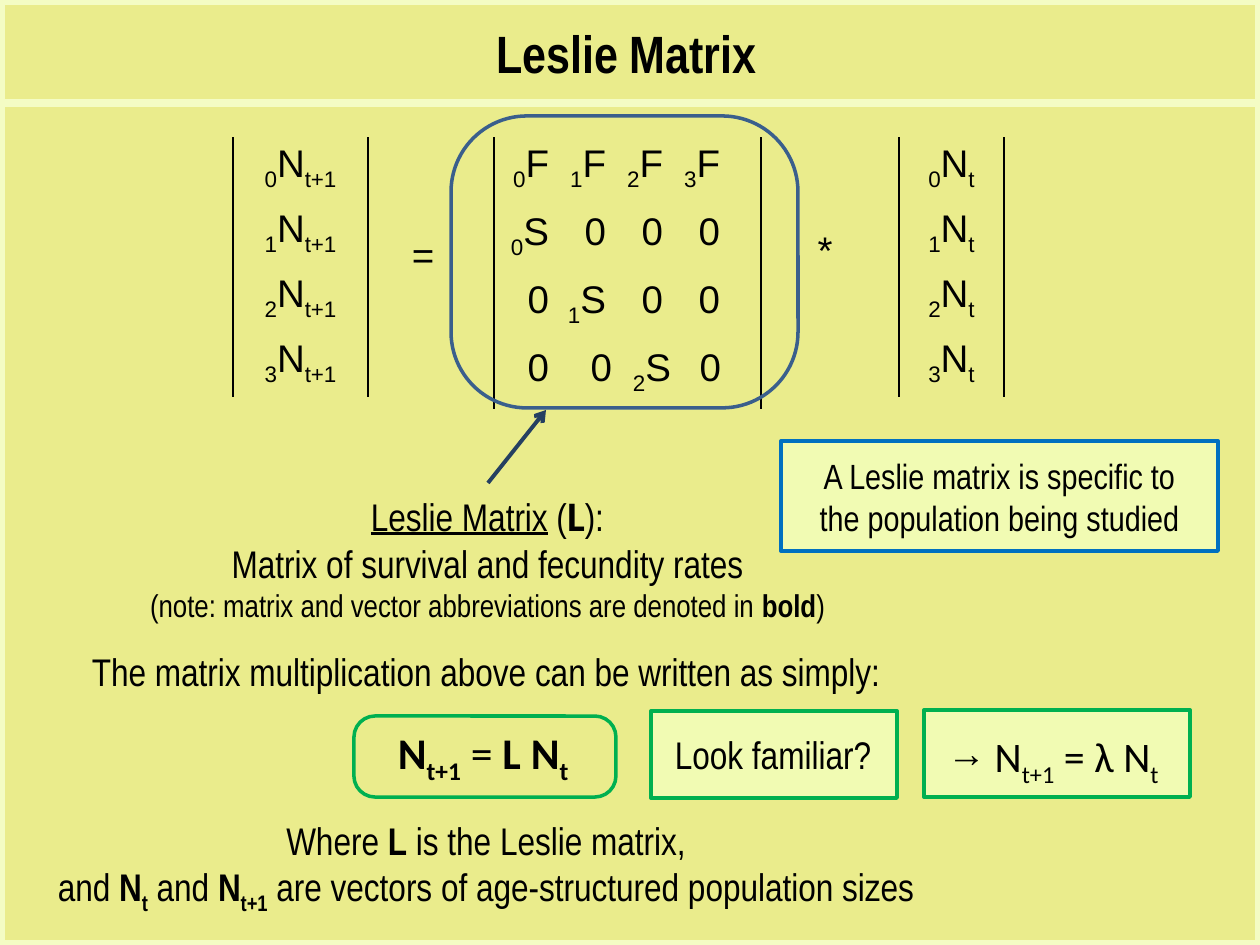
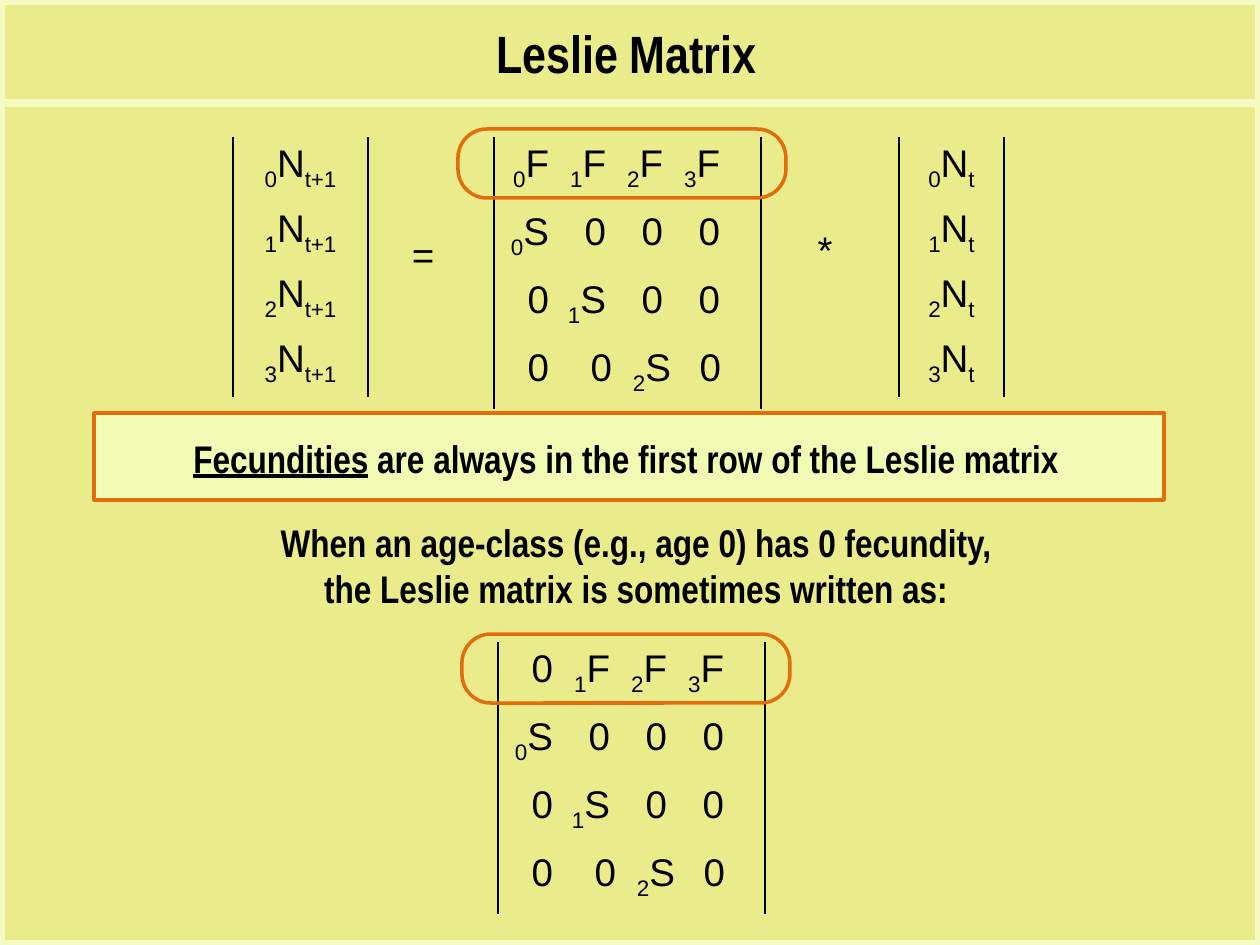
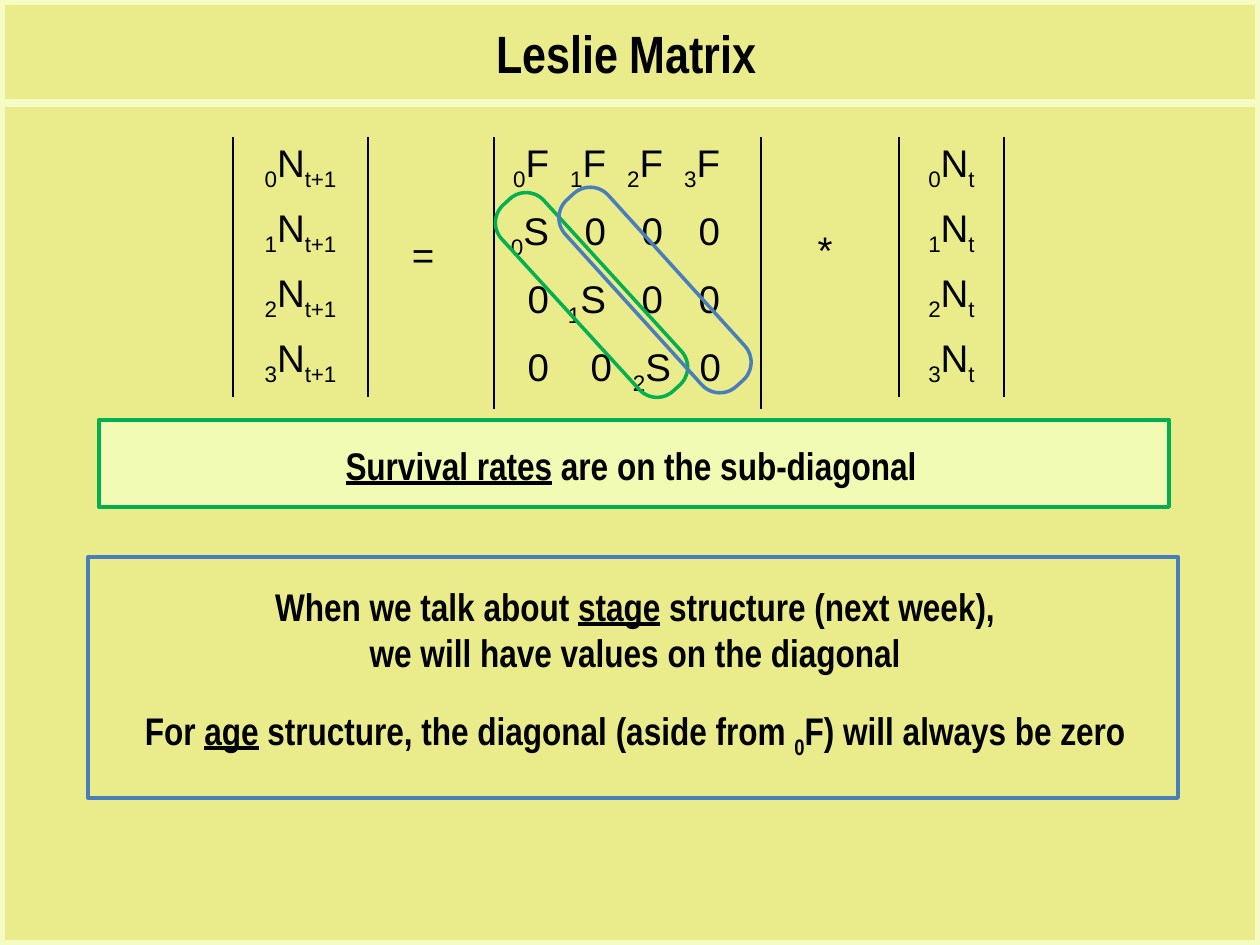
from lxml import etree
from pptx import Presentation
from pptx import util as u
from pptx.dml.color import RGBColor
from pptx.enum import shapes, text
from pptx.oxml.ns import qn

PAPER, PALE, NOTE, BLACK = "EAEC8C", "F4FCC4", "F1FBB3", "000000"
GREEN, ORANGE, BLUE, SKY = "00B050", "E46C0A", "4A7EBB", "0070C0"
STEEL, NAVY = "3A5F8C", "254061"
NARROW, SANS, MATH = "Arial Narrow", "Arial", "Calibri"
SUB, BOLD, UNDER = "~", "^", "|"

TOP, MID = 137, 494
EVEN, LATE = [55, 112, 169, 226], [55, 118, 177, 227]
RATES = [
    ["~0~S", "0", "0", "0"],
    ["0", "~1~S", "0", "0"],
    ["0", "0", "~2~S", "0"],
]
FIRST = ["~0~F", "~1~F", "~2~F", "~3~F"]


def px(n):
    return u.Emu(n * 914400 // 126)


def box(*nums):
    return [px(n) for n in nums]


def tint(code):
    return RGBColor.from_string(code)


def split(line):
    on, word = frozenset(), ""
    for char in line:
        if char in (SUB, BOLD, UNDER):
            if word:
                yield word, on
            on, word = on ^ {char}, ""
        else:
            word += char
    if word:
        yield word, on


def set_tabs(para, stops):
    tabs = etree.SubElement(para._p.get_or_add_pPr(), qn("a:tabLst"))
    for stop in stops:
        etree.SubElement(tabs, qn("a:tab"), pos=str(px(stop)), algn="r")


def fill_para(para, line, size=22, face=NARROW, bold=False, gap=0,
              align=text.PP_ALIGN.CENTER, stops=()):
    para.alignment = align
    if gap:
        para.space_before = u.Pt(gap)
    if stops:
        set_tabs(para, stops)
    for word, on in split(line):
        run = para.add_run()
        run.text = word
        font = run.font
        font.size, font.name = u.Pt(size), face
        font.bold = bold or BOLD in on
        font.underline = UNDER in on
        font.color.rgb = tint(BLACK)
        if SUB in on:
            font._element.set("baseline", "-25000")


def fill_frame(frame, lines, **look):
    frame.word_wrap = True
    for i, line in enumerate(lines):
        para = frame.add_paragraph() if i else frame.paragraphs[0]
        words, extra = (line, {}) if isinstance(line, str) else line
        fill_para(para, words, **{**look, **extra})


def add_text(slide, place, lines, **look):
    frame = slide.shapes.add_textbox(*box(*place)).text_frame
    fill_frame(frame, lines, **look)
    return frame


def add_outline(slide, place, color, width=2, round_by=None, turn=0, fill=None):
    kind = shapes.MSO_SHAPE.RECTANGLE
    if round_by:
        kind = shapes.MSO_SHAPE.ROUNDED_RECTANGLE
    shape = slide.shapes.add_shape(kind, *box(*place))
    if round_by:
        shape.adjustments[0] = round_by
    shape.shadow.inherit = False
    shape.rotation = turn
    if fill:
        shape.fill.solid()
        shape.fill.fore_color.rgb = tint(fill)
    else:
        shape.fill.background()
    shape.line.color.rgb = tint(color)
    shape.line.width = u.Pt(width)
    return shape


def add_panel(slide, place, color, lines, fill=NOTE, sink=0, shift=0, **look):
    frame = add_outline(slide, place, color, 2.25, fill=fill).text_frame
    frame.vertical_anchor = text.MSO_ANCHOR.MIDDLE
    frame.margin_top = px(2 * max(sink, 0))
    frame.margin_bottom = px(2 * max(-sink, 0))
    frame.margin_left, frame.margin_right = px(10 + shift), px(10 - shift)
    fill_frame(frame, lines, **look)
    return frame


def add_line(slide, ends, color, width, arrow=False):
    line = slide.shapes.add_connector(shapes.MSO_CONNECTOR.STRAIGHT, *box(*ends))
    line.line.color.rgb = tint(color)
    line.line.width = u.Pt(width)
    if arrow:
        etree.SubElement(line.line._get_or_add_ln(), qn("a:tailEnd"), type="arrow")
    etree.SubElement(line._element.spPr, qn("a:effectLst"))


def set_edges(cell, drawn):
    props = cell._tc.get_or_add_tcPr()
    for side in ("lnL", "lnR", "lnT", "lnB"):
        edge = etree.SubElement(props, qn("a:" + side), w="12700")
        if side in drawn:
            solid = etree.SubElement(edge, qn("a:solidFill"))
            etree.SubElement(solid, qn("a:srgbClr"), val=BLACK)
        else:
            etree.SubElement(edge, qn("a:noFill"))
    cell.fill.background()


def add_stack(slide, place, lines, bars=("lnL", "lnR"), **look):
    left, top, width, high = place
    spot = box(left, top, width, high * len(lines))
    table = slide.shapes.add_table(len(lines), 1, *spot).table
    table.first_row = table.horz_banding = False
    for r, line in enumerate(lines):
        table.rows[r].height = px(high)
        cell = table.cell(r, 0)
        cell.margin_left = cell.margin_right = 0
        cell.margin_top = cell.margin_bottom = px(6)
        fill_frame(cell.text_frame, [line], face=SANS, **look)
        set_edges(cell, bars)


def add_leslie(slide, left, top, first):
    rows = ["".join("\t" + item for item in row) for row in [first] + RATES]
    lines = rows[:-1] + [(rows[-1], {"stops": LATE})]
    add_stack(slide, (left, top, 267, 68), lines,
              align=text.PP_ALIGN.LEFT, stops=EVEN)


def add_vector(slide, left, width, time):
    add_stack(slide, (left, TOP, width, 65),
              [f"~{age}~N~{time}~" for age in range(4)])


def add_sign(slide, left, top, width, sign):
    add_stack(slide, (left, top, width, 63), [sign], bars=())


def add_product(slide):
    add_vector(slide, 233, 135, "t+1")
    add_sign(slide, 407, 229, 32, "=")
    add_leslie(slide, MID, TOP, FIRST)
    add_sign(slide, 804, 224, 42, "*")
    add_vector(slide, 899, 105, "t")


def add_page(deck):
    slide = deck.slides.add_slide(deck.slide_layouts[6])
    add_line(slide, (0, 103, 1260, 103), PALE, 5)
    add_outline(slide, (0, 0, 1260, 945), PALE, 6)
    add_text(slide, (93, 15, 1067, 77), ["Leslie Matrix"], size=30, bold=True)
    add_product(slide)
    return slide


def ring_row(slide, left, top):
    add_outline(slide, (left - 36, top - 8, 328, 69), ORANGE, round_by=0.42)


def show_whole(slide):
    add_outline(slide, (451, 116, 347, 292), STEEL, round_by=0.26)
    add_line(slide, (488, 483, 546, 410), NAVY, 2.25, arrow=True)
    label = add_text(slide, (39, 483, 897, 149), [
        "|Leslie Matrix| (^L^):",
        "Matrix of survival and fecundity rates",
        ("(note: matrix and vector abbreviations are denoted in ^bold^)", {"size": 18}),
    ])
    symbol = label.paragraphs[0].runs[2].font
    symbol.name, symbol.size = MATH, u.Pt(24)
    add_text(slide, (-4, 642, 980, 270), [
        "The matrix multiplication above can be written as simply:",
        ("^N~t+1~^ = ^L N~t ~^", {"size": 25, "face": MATH, "gap": 18}),
        ("Where ^L^ is the Leslie matrix,", {"gap": 18}),
        "and ^N~t~^ and ^N~t+1~^ are vectors of age-structured population sizes",
    ])
    add_outline(slide, (354, 716, 262, 81), GREEN, round_by=0.26)
    add_panel(slide, (651, 711, 246, 87), GREEN, ["Look familiar?"], shift=-1)
    recall = add_panel(slide, (924, 710, 266, 87), GREEN,
                       ["→ ||N~t+1~ = λ N~t~"], sink=6, shift=-4,
                       size=24, face=MATH)
    lead = recall.paragraphs[0].runs[0].font
    lead.name, lead.size = NARROW, u.Pt(22)
    add_panel(slide, (781, 441, 437, 110), SKY,
              ["A Leslie matrix is specific to", "the population being studied"],
              size=20)


def show_births(slide):
    ring_row(slide, MID, TOP)
    add_panel(slide, (94, 413, 1070, 87), ORANGE,
              ["|Fecundities| are always in the first row of the Leslie matrix"],
              sink=2, shift=-3, bold=True)
    left, top = MID + 4, 642
    add_leslie(slide, left, top, ["0"] + FIRST[1:])
    ring_row(slide, left, top)
    add_text(slide, (53, 513, 1166, 106), [
        "When an age-class (e.g., age 0) has 0 fecundity,",
        "the Leslie matrix is sometimes written as:",
    ], bold=True)


def show_survival(slide):
    add_outline(slide, (563, 169, 57, 252), GREEN, round_by=0.42, turn=137.6)
    add_panel(slide, (99, 420, 1070, 87), GREEN,
              ["|Survival rates| are on the sub-diagonal"],
              sink=2, shift=-3, bold=True)
    add_outline(slide, (626, 164, 58, 252), BLUE, round_by=0.42, turn=137.8)
    add_panel(slide, (88, 557, 1090, 241), BLUE, [
        "When we talk about |stage| structure (next week),",
        "we will have values on the diagonal",
        ("For |age| structure, the diagonal (aside from ~0~F) will always be zero",
         {"gap": 18}),
    ], fill=None, sink=-6, shift=2, bold=True)


def main():
    deck = Presentation()
    deck.slide_width, deck.slide_height = box(1260, 945)
    ground = deck.slide_master.background.fill
    ground.solid()
    ground.fore_color.rgb = tint(PAPER)
    for show in (show_whole, show_births, show_survival):
        show(add_page(deck))
    deck.save("out.pptx")


if __name__ == "__main__":
    main()
